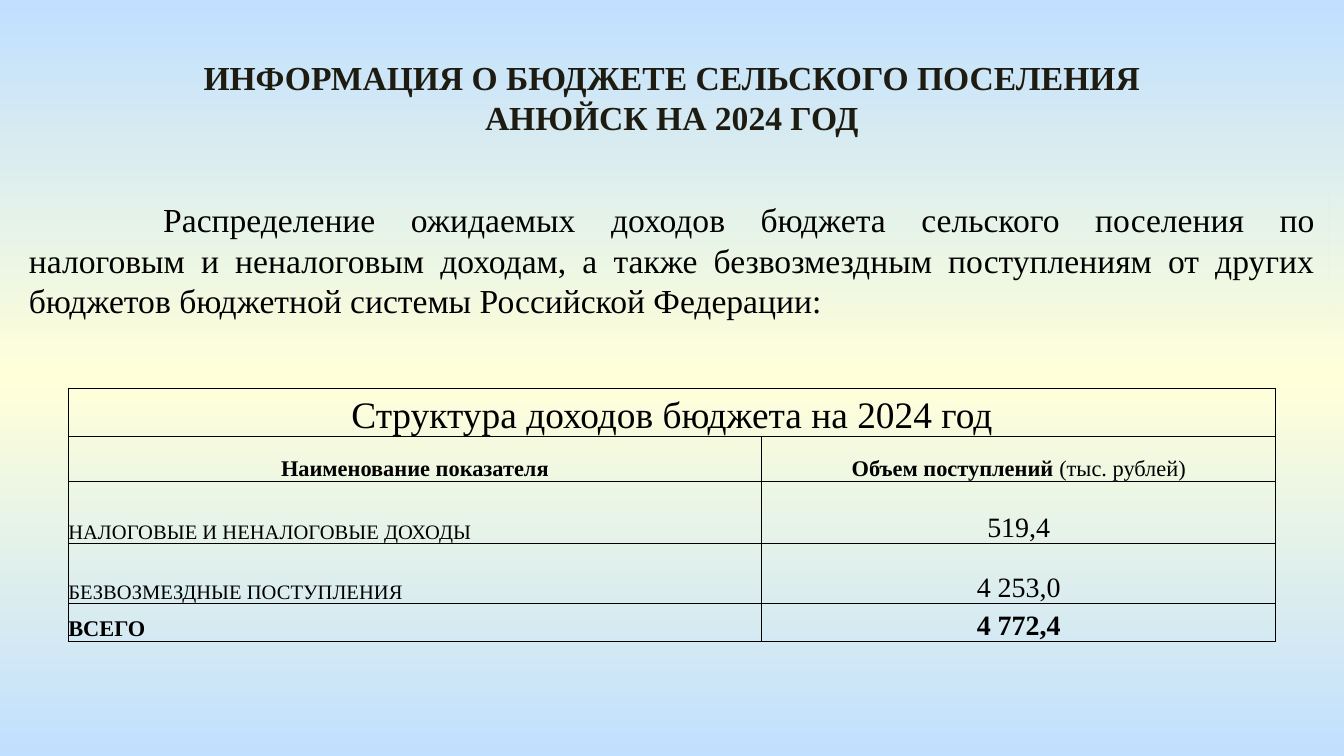
from copy import deepcopy
from dataclasses import dataclass

from lxml import etree
from pptx import Presentation
from pptx.dml.color import RGBColor
from pptx.enum.shapes import MSO_SHAPE
from pptx.enum.text import MSO_ANCHOR, MSO_AUTO_SIZE, PP_ALIGN
from pptx.oxml.ns import qn
from pptx.util import Pt

LEFT, CENTER, JUSTIFY = PP_ALIGN.LEFT, PP_ALIGN.CENTER, PP_ALIGN.JUSTIFY
TOP, BOTTOM = MSO_ANCHOR.TOP, MSO_ANCHOR.BOTTOM
NO_AUTOFIT, GROW = MSO_AUTO_SIZE.NONE, MSO_AUTO_SIZE.SHAPE_TO_FIT_TEXT
RECTANGLE = MSO_SHAPE.RECTANGLE
TITLE_ONLY = 5


@dataclass(frozen=True)
class Theme:
    font: str = "Times New Roman"
    ink: str = "000000"
    title_ink: str = "1E1C11"
    sky: str = "C1E0FF"
    cream: str = "FFFFD9"
    border: float = 0.5
    body: int = 18
    caption: int = 20
    header: int = 12
    label: int = 11
    amount: int = 15


THEME = Theme()


def write(paragraph, text, size, bold=False, color=THEME.ink, align=LEFT):
    paragraph.alignment = align
    run = paragraph.add_run()
    run.text = text
    run.font.name = THEME.font
    run.font.size = Pt(size)
    run.font.bold = bold
    run.font.color.rgb = RGBColor.from_string(color)


class BudgetSlide:
    def __init__(self, presentation, theme):
        self.theme = theme
        self.slide = presentation.slides.add_slide(
            presentation.slide_layouts[TITLE_ONLY])

    def background(self):
        fill = self.slide.background.fill
        fill.gradient()
        fill.gradient_angle = 270
        stops = self.slide.element.xpath(".//a:gsLst")[0]
        stops.insert(1, deepcopy(stops[0]))
        colors = (self.theme.sky, self.theme.cream, self.theme.sky)
        for stop, color, position in zip(fill.gradient_stops, colors, (0, 0.5, 1)):
            stop.color.rgb = RGBColor.from_string(color)
            stop.position = position

    def title(self, text, left, top, width, height):
        title = self.slide.shapes.title
        title.left, title.top = Pt(left), Pt(top)
        title.width, title.height = Pt(width), Pt(height)
        frame = title.text_frame
        frame.word_wrap = True
        frame.auto_size = NO_AUTOFIT
        frame.vertical_anchor = TOP
        write(frame.paragraphs[0], text, self.theme.body, bold=True,
              color=self.theme.title_ink, align=CENTER)

    def paragraph(self, text, left, top, width, height, indent):
        panel = self.slide.shapes.add_shape(
            RECTANGLE, Pt(left), Pt(top), Pt(width), Pt(height))
        panel.shadow.inherit = False
        panel.line.fill.background()
        panel.element.set("useBgFill", "1")
        frame = panel.text_frame
        frame.word_wrap = True
        frame.auto_size = GROW
        frame.vertical_anchor = TOP
        intro = frame.paragraphs[0]
        write(intro, text, self.theme.body, align=JUSTIFY)
        properties = intro._p.get_or_add_pPr()
        properties.set("marL", "0")
        properties.set("indent", str(Pt(indent)))

    def table(self, rows, left, top, widths, heights):
        table = self.slide.shapes.add_table(
            len(rows), len(widths), Pt(left), Pt(top),
            Pt(sum(widths)), Pt(sum(heights))).table
        table.first_row = False
        table.horz_banding = False
        for column, width in zip(table.columns, widths):
            column.width = Pt(width)
        for row, height in zip(table.rows, heights):
            row.height = Pt(height)
        for row, contents in enumerate(rows):
            for column in range(len(widths)):
                self.style_cell(table.cell(row, column))
            for column, runs in enumerate(contents):
                paragraph = table.cell(row, column).text_frame.paragraphs[0]
                for text, style in runs:
                    write(paragraph, text, **style)
        table.cell(0, 0).merge(table.cell(0, len(widths) - 1))

    def style_cell(self, cell):
        cell.margin_left = cell.margin_right = 0
        cell.margin_top = cell.margin_bottom = 0
        cell.vertical_anchor = BOTTOM
        cell.fill.background()
        properties = cell._tc.get_or_add_tcPr()
        for index, side in enumerate(("lnL", "lnR", "lnT", "lnB")):
            line = etree.Element(qn(f"a:{side}"), w=str(Pt(self.theme.border)))
            solid = etree.SubElement(line, qn("a:solidFill"))
            etree.SubElement(solid, qn("a:srgbClr"), val=self.theme.ink)
            properties.insert(index, line)


def main():
    presentation = Presentation()
    presentation.slide_width, presentation.slide_height = Pt(720), Pt(405)

    caption = dict(size=THEME.caption, align=CENTER)
    header = dict(size=THEME.header, bold=True, align=CENTER)
    unit = dict(size=THEME.header, align=CENTER)
    label = dict(size=THEME.label)
    amount = dict(size=THEME.amount, align=CENTER)
    total_label = dict(size=THEME.header, bold=True)
    total_amount = dict(amount, bold=True)
    revenue = [
        [[("Структура доходов бюджета на 2024 год", caption)]],
        [[("Наименование показателя", header)],
         [("Объем поступлений ", header), ("(тыс. рублей)", unit)]],
        [[("НАЛОГОВЫЕ И НЕНАЛОГОВЫЕ ДОХОДЫ", label)], [("519,4", amount)]],
        [[("БЕЗВОЗМЕЗДНЫЕ ПОСТУПЛЕНИЯ", label)], [("4 253,0", amount)]],
        [[("ВСЕГО", total_label)], [("4 772,4", total_amount)]],
    ]

    budget = BudgetSlide(presentation, THEME)
    budget.background()
    budget.paragraph(
        "Распределение ожидаемых доходов бюджета сельского поселения по "
        "налоговым и неналоговым доходам, а также безвозмездным поступлениям "
        "от других бюджетов бюджетной системы Российской Федерации:",
        8.4, 103.2, 703.4, 72.7, indent=72)
    budget.title("ИНФОРМАЦИЯ О БЮДЖЕТЕ СЕЛЬСКОГО ПОСЕЛЕНИЯ АНЮЙСК НА 2024 ГОД",
                 81.7, 26.9, 556.6, 51)
    budget.table(revenue, 36.6, 208.1, widths=(371.5, 275.4),
                 heights=(25.6, 24.2, 33.5, 32, 20.3))
    presentation.save("out.pptx")


if __name__ == "__main__":
    main()
